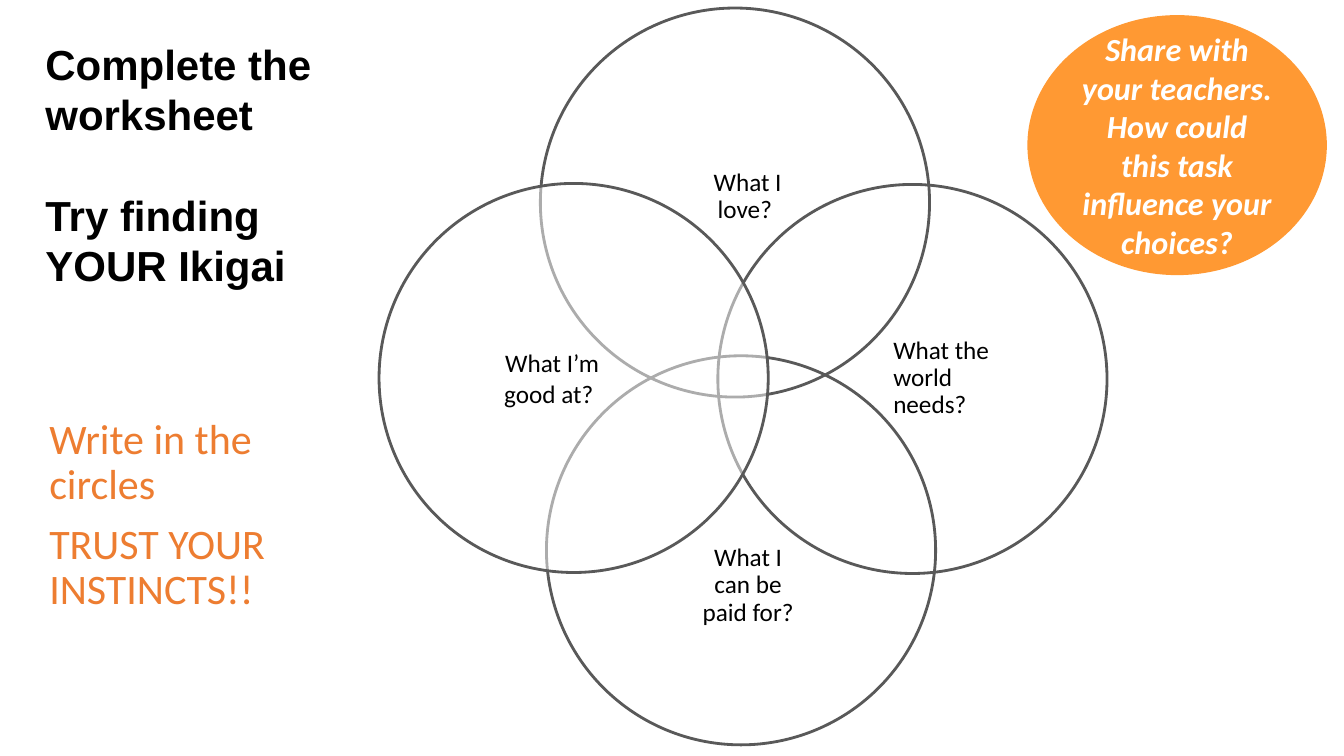
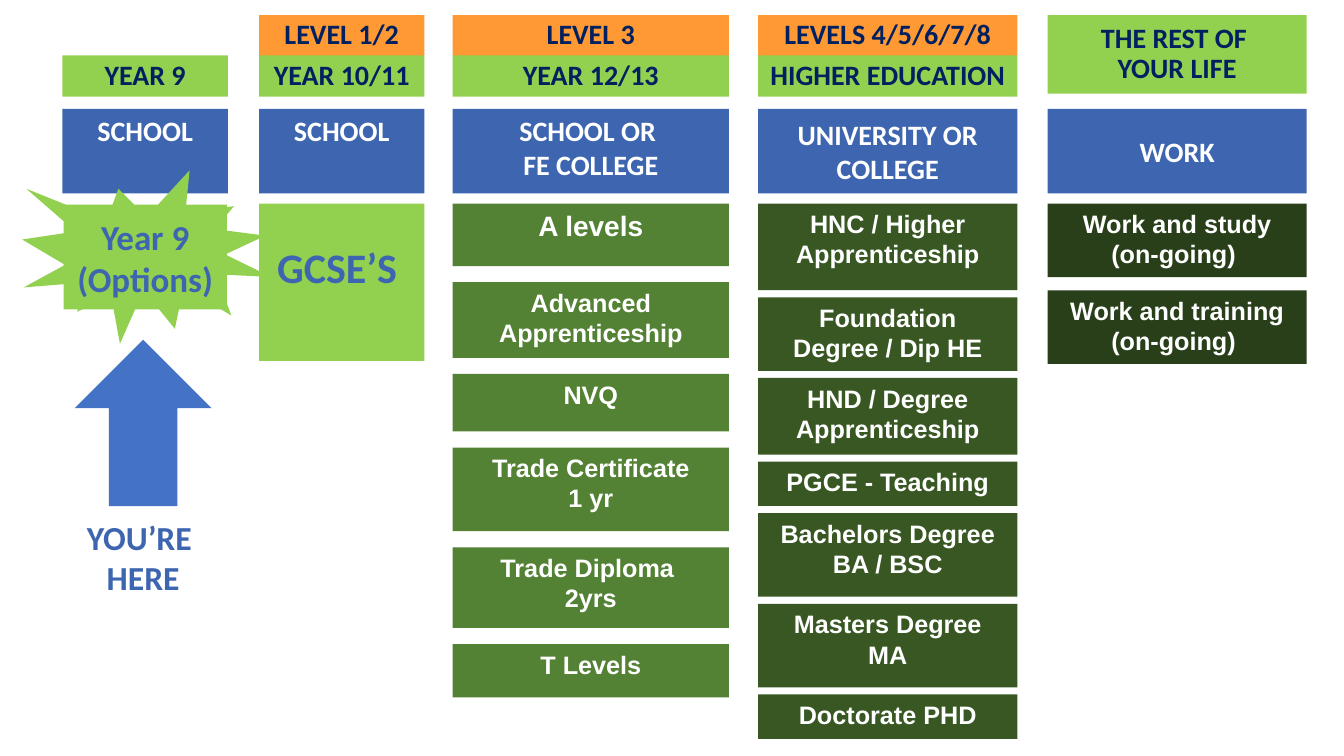
from pptx import Presentation
from pptx.dml.color import RGBColor
from pptx.enum.shapes import MSO_SHAPE as Preset
from pptx.enum.text import MSO_ANCHOR as Anchor, MSO_AUTO_SIZE as AutoSize, PP_ALIGN as Align
from pptx.oxml.ns import qn
from pptx.util import Emu, Pt
from lxml.etree import SubElement

PX = 9144
TITLE_ONLY, BLANK = 5, 6
HEADER_TOP, HEADER_HEIGHT = 15, 81
PLACE_TOP, PLACE_HEIGHT = 108, 84
ROUTES_TOP = 202

WHITE = RGBColor(0xFF, 0xFF, 0xFF)
BLACK = RGBColor(0, 0, 0)
GREY = RGBColor(0x59, 0x59, 0x59)
ORANGE = RGBColor(0xFF, 0x99, 0x33)
ORANGE_TEXT = RGBColor(0xED, 0x7D, 0x31)
NAVY = RGBColor(0x00, 0x20, 0x60)
BLUE = RGBColor(0x3E, 0x66, 0xB0)
ARROW_BLUE = RGBColor(0x44, 0x72, 0xC4)
LIME = RGBColor(0x92, 0xD0, 0x50)
GREEN = RGBColor(0x54, 0x82, 0x35)
DARK_GREEN = RGBColor(0x38, 0x57, 0x23)
DEEP_GREEN = RGBColor(0x28, 0x3F, 0x19)


def px(*lengths):
    """Turn px lengths into EMU."""
    return [Emu(length * PX) for length in lengths]


def set_text(shape, text, size=18, font="Calibri", color=BLACK, bold=False, italic=False,
             align=Align.CENTER, anchor=Anchor.MIDDLE, spacing=1.0, gap=0,
             margins=(10, 5, 10, 5)):
    """Write one paragraph per line of text in one format."""
    frame = shape.text_frame
    frame.word_wrap = True
    frame.auto_size = AutoSize.NONE
    frame.vertical_anchor = anchor
    (frame.margin_left, frame.margin_top,
     frame.margin_right, frame.margin_bottom) = px(*margins)
    for index, line in enumerate(text.split("\n")):
        paragraph = frame.add_paragraph() if index else frame.paragraphs[0]
        paragraph.alignment = align
        paragraph.line_spacing = spacing
        paragraph.space_before = Pt(gap if index else 0)
        run = paragraph.add_run()
        run.text = line
        run.font.size = Pt(size)
        run.font.name = font
        run.font.bold = bold
        run.font.italic = italic
        run.font.color.rgb = color


def add_label(slide, box, text, **text_format):
    """Add a text box."""
    set_text(slide.shapes.add_textbox(*px(*box)), text, **text_format)


def add_block(slide, box, fill, text="", preset=Preset.RECTANGLE, **text_format):
    """Add a filled shape without outline, with optional text."""
    shape = slide.shapes.add_shape(preset, *px(*box))
    shape.shadow.inherit = False
    shape.fill.solid()
    shape.fill.fore_color.rgb = fill
    shape.line.fill.background()
    if text:
        set_text(shape, text, **text_format)


def add_circle(slide, left, top, diameter, veiled):
    """Add an outlined circle, veiled in half-transparent white or empty."""
    circle = slide.shapes.add_shape(Preset.OVAL, *px(left, top, diameter, diameter))
    circle.shadow.inherit = False
    circle.line.color.rgb = GREY
    circle.line.width = Pt(2)
    if veiled:
        circle.fill.solid()
        circle.fill.fore_color.rgb = WHITE
        color = circle.fill._xPr.find(qn("a:solidFill"))[0]
        SubElement(color, qn("a:alpha")).set("val", "50000")
    else:
        circle.fill.background()


def add_ikigai_diagram(slide, left, top):
    """Draw the four overlapping circles and their questions."""
    diameter = 386
    circles = [
        (160, 0, True, (323, 126, 85, 122), "What I love? ", Align.CENTER),
        (336, 175, False, (510, 219, 133, 297), "What the world needs?", Align.LEFT),
        (166, 345, False, (313, 512, 106, 122), "What I can be paid for?", Align.CENTER),
    ]
    for x, y, veiled, (label_x, label_y, width, height), question, align in circles:
        add_circle(slide, left + x, top + y, diameter, veiled)
        add_label(slide, (left + label_x, top + label_y, width, height), question,
                  align=align, spacing=0.9, margins=(0, 0, 0, 0))
    add_circle(slide, left, top + 174, diameter, True)
    add_label(slide, (left + 79, top + 332, 149, 71), "What I’m good at? ",
              align=Align.RIGHT, anchor=Anchor.TOP)


def build_ikigai_slide(presentation):
    """Build the worksheet slide."""
    slide = presentation.slides.add_slide(presentation.slide_layouts[TITLE_ONLY])
    title = slide.shapes.title
    title.left, title.top, title.width, title.height = px(35, 33, 309, 263)
    set_text(title, "Complete the worksheet\nTry finding YOUR Ikigai", size=30, font="Arial",
             bold=True, align=Align.LEFT, anchor=Anchor.TOP, gap=36)
    add_label(slide, (39, 410, 245, 99), "Write in the circles\nTRUST YOUR INSTINCTS!!",
              size=30, color=ORANGE_TEXT, align=Align.LEFT, anchor=Anchor.TOP,
              spacing=0.9, gap=10)
    add_ikigai_diagram(slide, 376, 8)
    add_block(slide, (1019, 15, 297, 258), ORANGE,
              "Share with your teachers.\nHow could this task influence your choices?",
              preset=Preset.OVAL, size=23, color=WHITE, bold=True, italic=True)


def add_header(slide, left, width, level, stage):
    """Add a stage band, below an orange level band where there is one."""
    style = dict(size=20, color=NAVY, bold=True, spacing=0.9)
    band = HEADER_HEIGHT // 2
    if level:
        add_block(slide, (left, HEADER_TOP, width, band + 1), ORANGE, level, **style)
    tall = "\n" in stage
    top = HEADER_TOP if tall else HEADER_TOP + band
    height = HEADER_HEIGHT - 3 if tall else band + 1
    add_block(slide, (left, top, width, height), LIME, stage, **style)


def add_routes(slide, left, width, fill, gap, routes):
    """Stack the routes of one stage at equal gaps."""
    top = ROUTES_TOP
    for text, height, size in routes:
        add_block(slide, (left, top, width, height), fill, text, size=size, font="Arial",
                  color=WHITE, bold=True, anchor=Anchor.TOP)
        top += height + gap


def add_stage(slide, left, width, level, stage, place, anchor, fill=None, gap=0, routes=()):
    """Add one column: header, place of study and routes."""
    add_header(slide, left, width, level, stage)
    add_block(slide, (left, PLACE_TOP, width, PLACE_HEIGHT), BLUE, place, size=20,
              color=WHITE, bold=True, anchor=anchor)
    add_routes(slide, left, width, fill, gap, routes)


def add_starting_point(slide, left, top):
    """Add the star, its label and the arrow that points at it."""
    style = dict(color=BLUE, bold=True)
    add_block(slide, (left, top, 247, 172), LIME, preset=Preset.EXPLOSION1)
    add_block(slide, (left + 41, top + 34, 162, 104), LIME, "Year 9\n(Options)",
              size=25, **style)
    add_block(slide, (left + 52, top + 168, 136, 165), ARROW_BLUE, preset=Preset.UP_ARROW)
    add_label(slide, (left - 17, top + 339, 274, 91), "YOU’RE \nHERE", size=24,
              anchor=Anchor.TOP, **style)


def build_pathway_slide(presentation):
    """Build the slide of stages from Year 9 onwards."""
    slide = presentation.slides.add_slide(presentation.slide_layouts[BLANK])
    college_routes = [
        ("A levels", 62, 20), ("Advanced Apprenticeship", 75, 18), ("NVQ", 57, 18),
        ("Trade Certificate\n1 yr", 83, 18), ("Trade Diploma \n2yrs", 80, 18),
        ("T Levels", 53, 18),
    ]
    higher_routes = [
        ("HNC / Higher Apprenticeship", 86, 18), ("Foundation Degree / Dip HE", 73, 18),
        ("HND / Degree Apprenticeship", 76, 18), ("PGCE - Teaching", 44, 18),
        ("Bachelors Degree\nBA / BSC", 83, 18), ("Masters Degree\nMA", 83, 18),
        ("Doctorate PHD", 44, 18),
    ]
    work_routes = [("Work and study\n(on-going) ", 73, 18),
                   ("Work and training\n(on-going) ", 73, 18)]
    stages = [
        (62, 164, "", "YEAR 9", "SCHOOL", Anchor.TOP),
        (257, 164, "LEVEL 1/2", "YEAR 10/11", "SCHOOL", Anchor.TOP),
        (449, 274, "LEVEL 3", "YEAR 12/13", "SCHOOL OR \nFE COLLEGE", Anchor.TOP,
         GREEN, 16, college_routes),
        (752, 257, "LEVELS 4/5/6/7/8", "HIGHER EDUCATION", "UNIVERSITY OR COLLEGE",
         Anchor.MIDDLE, DARK_GREEN, 7, higher_routes),
        (1039, 257, "", "THE REST OF \nYOUR LIFE", "WORK", Anchor.MIDDLE,
         DEEP_GREEN, 13, work_routes),
    ]
    for stage in stages:
        add_stage(slide, *stage)
    add_block(slide, (257, ROUTES_TOP, 164, 156), LIME, "GCSE’S ", size=30, color=BLUE,
              bold=True, margins=(10, 5, 10, 35))
    add_starting_point(slide, 22, 169)


def main():
    """Build and save the presentation."""
    presentation = Presentation()
    presentation.slide_width, presentation.slide_height = px(1333, 750)
    build_ikigai_slide(presentation)
    build_pathway_slide(presentation)
    presentation.save("out.pptx")


if __name__ == "__main__":
    main()
